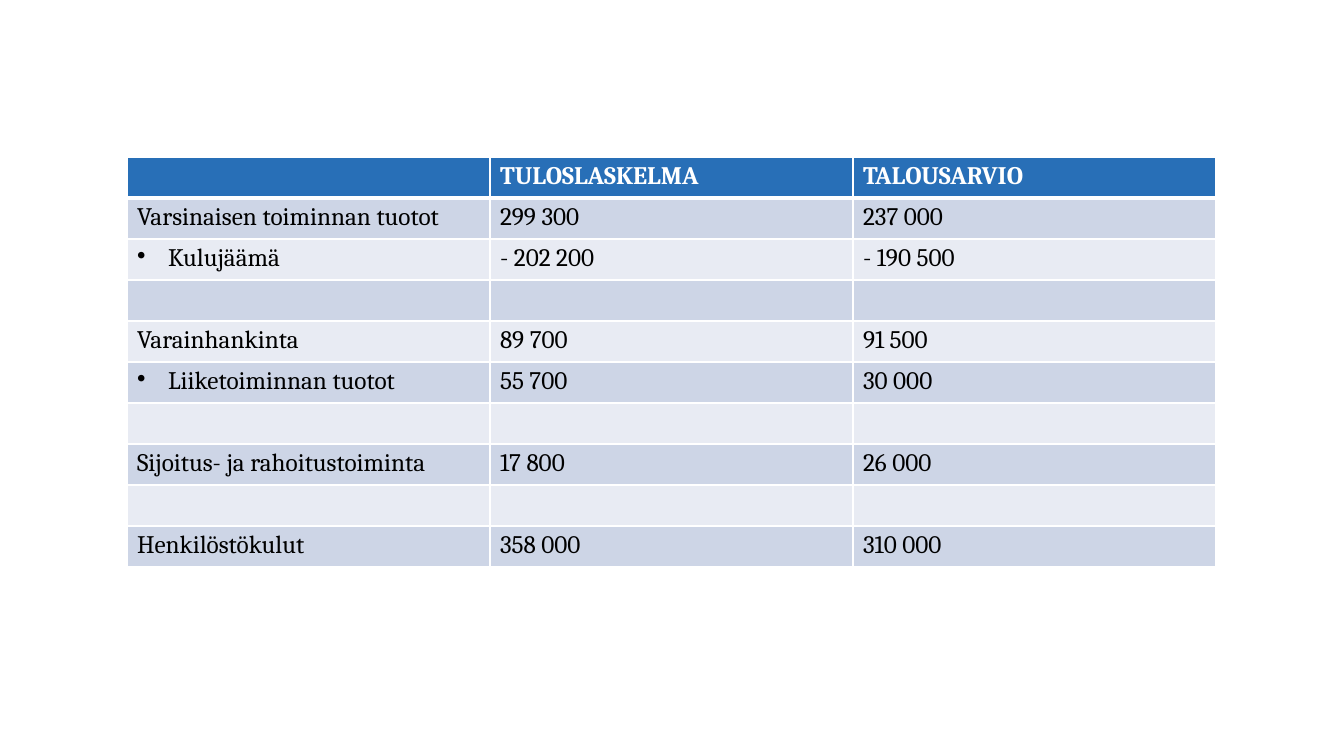
from lxml import etree
from pptx import Presentation
from pptx import util as u
from pptx.dml.color import RGBColor
from pptx.oxml import ns

EMU_PER_PX = 914400 / 100.8
COLORS = {
    "header": "286FB7",
    "odd": "CDD5E6",
    "even": "E8EBF3",
    "border": "FFFFFF",
    "header_text": "FFFFFF",
    "body_text": "000000",
}
BULLET = "•"
INDENT = 31
ROWS = [
    ("", "TULOSLASKELMA", "TALOUSARVIO"),
    ("Varsinaisen toiminnan tuotot", "299 300", "237 000"),
    ("• Kulujäämä", "- 202 200", "- 190 500"),
    ("", "", ""),
    ("Varainhankinta", "89 700", "91 500"),
    ("• Liiketoiminnan tuotot", "55 700", "30 000"),
    ("", "", ""),
    ("Sijoitus- ja rahoitustoiminta", "17 800", "26 000"),
    ("", "", ""),
    ("Henkilöstökulut", "358 000", "310 000"),
]


def px(length):
    return u.Emu(round(length * EMU_PER_PX))


def color(name):
    return RGBColor.from_string(COLORS[name])


def set_borders(cell, top, bottom):
    """Draw all four sides; top and bottom are widths in points."""
    properties = cell._tc.get_or_add_tcPr()
    for side, width in (("L", 1), ("R", 1), ("T", top), ("B", bottom)):
        line = etree.SubElement(properties, ns.qn(f"a:ln{side}"), w=str(u.Pt(width)))
        fill = etree.SubElement(line, ns.qn("a:solidFill"))
        etree.SubElement(fill, ns.qn("a:srgbClr"), val=COLORS["border"])


def set_bullet(para):
    properties = para._p.get_or_add_pPr()
    properties.set("marL", str(px(INDENT)))
    properties.set("indent", str(-px(INDENT)))
    bullet = etree.Element(ns.qn("a:buChar"), char=BULLET)
    properties.insert(0, bullet)


def fill_cell(cell, words, row):
    is_header = row == 0
    set_borders(cell, top=3 if row == 1 else 1, bottom=3 if is_header else 1)
    cell.fill.solid()
    band = "odd" if row % 2 else "even"
    cell.fill.fore_color.rgb = color("header" if is_header else band)

    para = cell.text_frame.paragraphs[0]
    para.text = words.removeprefix(BULLET).strip()
    para.font.name = "Cambria"
    para.font.size = u.Pt(18)
    para.font.bold = is_header
    para.font.color.rgb = color("header_text" if is_header else "body_text")
    if words.startswith(BULLET):
        set_bullet(para)


def add_budget_table(page, left, top, column_width, row_height):
    columns = len(ROWS[0])
    frame = page.shapes.add_table(
        len(ROWS), columns, px(left), px(top),
        px(column_width * columns), px(row_height * len(ROWS)))
    table = frame.table
    for column in table.columns:
        column.width = px(column_width)
    for row, entries in enumerate(ROWS):
        table.rows[row].height = px(row_height)
        for column, words in enumerate(entries):
            fill_cell(table.cell(row, column), words, row)


def main():
    deck = Presentation()
    deck.slide_width, deck.slide_height = px(1344), px(756)
    page = deck.slides.add_slide(deck.slide_layouts[6])
    add_budget_table(page, left=127, top=157, column_width=363, row_height=41)
    deck.save("out.pptx")


if __name__ == "__main__":
    main()
